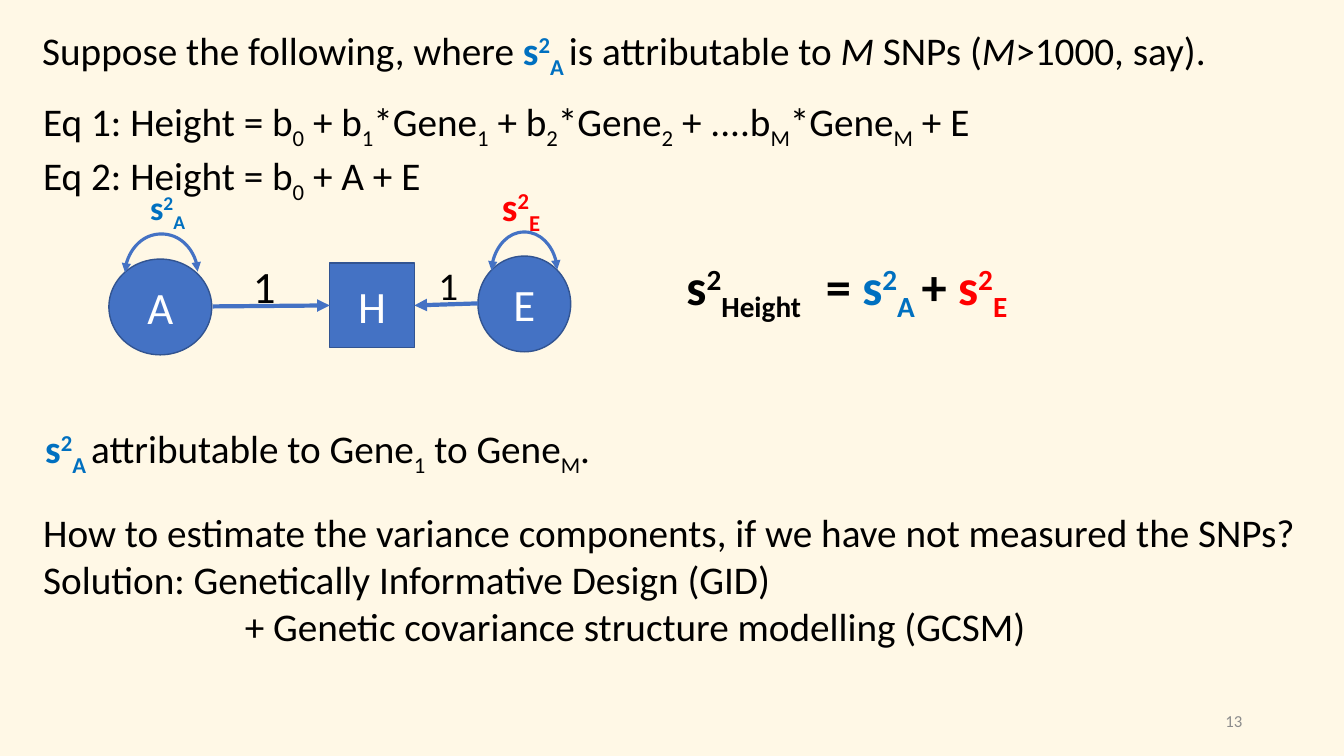
from lxml import etree
from pptx import Presentation
from pptx.dml.color import RGBColor
from pptx.enum.shapes import MSO_CONNECTOR, MSO_SHAPE
from pptx.enum.text import MSO_ANCHOR, PP_ALIGN
from pptx.oxml.ns import qn
from pptx.util import Inches, Pt

STRAIGHT, CURVE = MSO_CONNECTOR.STRAIGHT, MSO_CONNECTOR.CURVE
SQUARE, CIRCLE = MSO_SHAPE.RECTANGLE, MSO_SHAPE.OVAL
TOP, MIDDLE = MSO_ANCHOR.TOP, MSO_ANCHOR.MIDDLE
LEFT, CENTER, RIGHT = PP_ALIGN.LEFT, PP_ALIGN.CENTER, PP_ALIGN.RIGHT

FONT = "Calibri"
CREAM, BLACK, WHITE, GREY = "FFF8E6", "000000", "FFFFFF", "8C8C8C"
NODE_BLUE, NODE_EDGE = "4472C4", "325491"
GENETIC_BLUE, ENVIRONMENT_RED = "0070C0", "FF0000"
SUB, SUPER = -25000, 30000


def rgb(hex_color):
    """Turn a hex string into a colour."""
    return RGBColor.from_string(hex_color)


def sub(text, **style):
    """Return a subscript run."""
    return text, {"baseline": SUB, **style}


def variance(source, color):
    """Return the runs of a bold variance symbol with its subscript."""
    style = {"color": color, "bold": True}
    return [("s", style), ("2", {"baseline": SUPER, **style}), sub(source, **style)]


def write(frame, paragraphs, size=28, color=BLACK, align=LEFT, anchor=TOP, wrap=True, indents=()):
    """Fill a text frame with paragraphs, each a string or a list of runs."""
    frame.word_wrap = wrap
    frame.vertical_anchor = anchor
    for index, runs in enumerate(paragraphs):
        paragraph = frame.paragraphs[0] if index == 0 else frame.add_paragraph()
        paragraph.alignment = align
        if index < len(indents):
            paragraph._p.get_or_add_pPr().set("marL", str(Inches(indents[index])))
        for part in [runs] if isinstance(runs, str) else runs:
            text, style = (part, {}) if isinstance(part, str) else part
            run = paragraph.add_run()
            run.text = text
            run.font.name = FONT
            run.font.size = Pt(size)
            run.font.color.rgb = rgb(style.get("color", color))
            run.font.bold = style.get("bold", False)
            run.font.italic = style.get("italic", False)
            if "baseline" in style:
                run.font._element.set("baseline", str(style["baseline"]))


def add_text(slide, box, *paragraphs, **style):
    """Place a text box in the given box."""
    write(slide.shapes.add_textbox(*map(Inches, box)).text_frame, paragraphs, **style)


def add_node(slide, kind, box, letter):
    """Place one variable of the path diagram."""
    node = slide.shapes.add_shape(kind, *map(Inches, box))
    node.shadow.inherit = False
    node.fill.solid()
    node.fill.fore_color.rgb = rgb(NODE_BLUE)
    node.line.color.rgb = rgb(NODE_EDGE)
    node.line.width = Pt(1)
    write(node.text_frame, [letter], size=32, color=WHITE, align=CENTER, anchor=MIDDLE)


def add_arrow(slide, kind, start, end, width, ends):
    """Place a connector with triangles at the named ends."""
    arrow = slide.shapes.add_connector(kind, *map(Inches, (*start, *end)))
    arrow.line.color.rgb = rgb(NODE_BLUE)
    arrow.line.width = Pt(width)
    for end_name in ends:
        etree.SubElement(arrow.line._get_or_add_ln(), qn(f"a:{end_name}"), type="triangle")
    etree.SubElement(arrow._element.spPr, qn("a:effectLst"))
    return arrow


def add_loop(slide, center, y, span, rise=0.39, thickness=0.01):
    """Place a double-headed arc that opens downwards."""
    start = center + thickness / 2, y + span / 2
    end = center - thickness / 2, y - span / 2
    loop = add_arrow(slide, CURVE, start, end, 2.25, ("headEnd", "tailEnd"))
    properties = loop._element.spPr
    properties.find(qn("a:xfrm")).set("rot", str(90 * 60000))
    guides = properties.find(qn("a:prstGeom")).find(qn("a:avLst"))
    bend = round(rise / thickness * 100000)
    etree.SubElement(guides, qn("a:gd"), name="adj1", fmla=f"val {bend}")


def path_diagram(slide, left, top):
    """Draw A and E pointing at H, with their variances."""
    def at(x, y, *size):
        return left + x, top + y, *size

    add_node(slide, SQUARE, at(2.19, 0.85, 0.84, 0.84), "H")
    add_arrow(slide, STRAIGHT, at(1.03, 1.28), at(2.19, 1.27), 3, ["tailEnd"])
    add_text(slide, at(1.33, 0.76, 0.43, 0.64), "1", size=32, wrap=False)
    add_node(slide, CIRCLE, at(3.66, 0.78, 0.92, 0.95), "E")
    add_arrow(slide, STRAIGHT, at(3.66, 1.25), at(3.03, 1.27), 3, ["tailEnd"])
    add_text(slide, at(3.17, 0.78, 0.4, 0.71), "1")
    add_node(slide, CIRCLE, at(0, 0.81, 1.02, 0.95), "A")
    add_loop(slide, *at(0.52, 0.94), 0.72)
    add_text(slide, at(0.31, 0.05, 1.64, 0.5), variance("A", GENETIC_BLUE), size=24)
    add_loop(slide, *at(4.12, 0.92), 0.65)
    add_text(slide, at(3.8, 0, 1.4, 0.57), variance("E", ENVIRONMENT_RED))


def variance_equation(slide, box):
    """Write the decomposition of the height variance."""
    bold = {"bold": True}
    add_text(slide, box, [
        *variance("Height  ", BLACK), (" = ", bold),
        *variance("A ", GENETIC_BLUE), ("+ ", bold),
        *variance("E", ENVIRONMENT_RED)], size=36)


def model_statements(slide, left, top):
    """Write the assumption, the two equations and the attribution."""
    italic_m = ("M", {"italic": True})
    genetic = variance("A ", GENETIC_BLUE)
    add_text(slide, (left, top, 12.08, 0.57), [
        "Suppose the following, where ", *genetic, "is attributable to ",
        italic_m, " SNPs (", italic_m, ">1000, say)."])
    terms = []
    for lead, index in ((" + b", "1"), (" + b", "2"), (" + ....b", "M")):
        terms += [lead, sub(index), "*Gene", sub(index)]
    add_text(slide, (left + 0.01, top + 0.71, 9.65, 1.85),
             ["Eq 1: Height = b", sub("0"), *terms, " + E"],
             ["Eq 2: Height = b", sub("0"), " + A + E"])
    add_text(slide, (left + 0.03, top + 3.95, 6.67, 0.57), [
        *genetic, "attributable to Gene", sub("1"), " to Gene", sub("M"), "."])


def question(slide, box):
    """Write the closing question and its solution."""
    add_text(slide, box,
             "How to estimate the variance components, if we have not measured the SNPs?",
             "Solution: Genetically Informative Design (GID)",
             "+ Genetic covariance structure modelling (GCSM)",
             indents=(0, 0, 2))


def main():
    """Build the slide and save it."""
    deck = Presentation()
    deck.slide_width, deck.slide_height = Inches(13.33), Inches(7.5)
    slide = deck.slides.add_slide(deck.slide_layouts[6])
    slide.background.fill.solid()
    slide.background.fill.fore_color.rgb = rgb(CREAM)
    path_diagram(slide, 1.08, 1.76)
    variance_equation(slide, (6.71, 2.48, 4.29, 0.71))
    model_statements(slide, 0.32, 0.21)
    question(slide, (0.33, 4.99, 12.76, 1.51))
    add_text(slide, (9.42, 6.95, 3, 0.4), "13", size=12, color=GREY, align=RIGHT, anchor=MIDDLE)
    deck.save("out.pptx")


if __name__ == "__main__":
    main()
